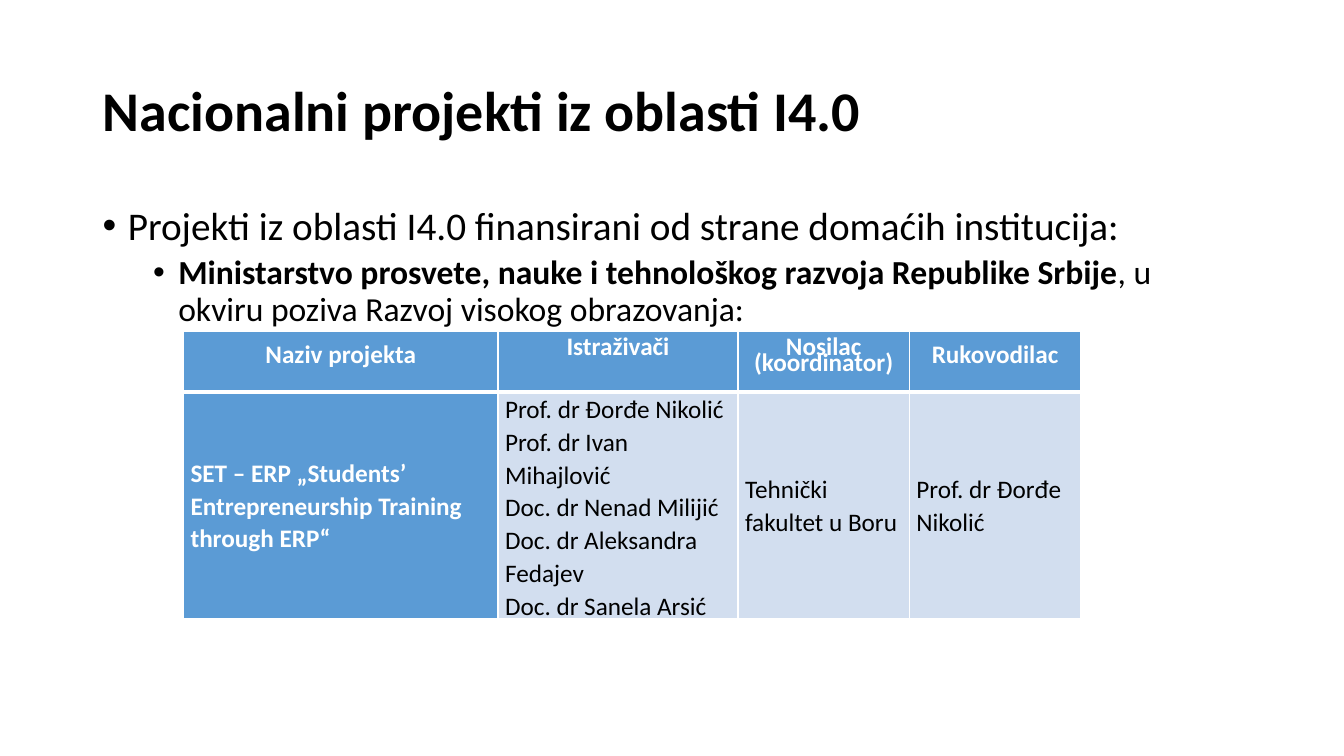
from lxml import etree
from pptx import Presentation
from pptx.dml.color import RGBColor
from pptx.enum.text import MSO_ANCHOR, PP_ALIGN
from pptx.oxml.ns import qn
from pptx.util import Inches, Pt

MIDDLE = MSO_ANCHOR.MIDDLE
LEFT, CENTER = PP_ALIGN.LEFT, PP_ALIGN.CENTER

FONT = "Calibri"
BLACK = RGBColor(0x00, 0x00, 0x00)
WHITE = RGBColor(0xFF, 0xFF, 0xFF)
BLUE = RGBColor(0x5B, 0x9B, 0xD5)
PALE_BLUE = RGBColor(0xD2, 0xDE, 0xEF)

TITLE = "Nacionalni projekti iz oblasti I4.0"
FUNDING = "Projekti iz oblasti I4.0 finansirani od strane domaćih institucija:"
MINISTRY = "Ministarstvo prosvete, nauke i tehnološkog razvoja Republike Srbije"
CALL = ", u okviru poziva Razvoj visokog obrazovanja:"

COLUMN_WIDTHS = [3.12, 2.38, 1.7, 1.7]
ROW_HEIGHTS = [0.6, 1.46]
HEADERS = [
    ["Naziv projekta"],
    ["Istraživači"],
    ["Nosilac", "(koordinator)"],
    ["Rukovodilac"],
]
PROJECT = [
    ["SET – ERP „Students’ Entrepreneurship Training through ERP“"],
    [
        "Prof. dr Đorđe Nikolić",
        "Prof. dr Ivan Mihajlović",
        "Doc. dr Nenad Milijić",
        "Doc. dr Aleksandra Fedajev",
        "Doc. dr Sanela Arsić",
    ],
    ["Tehnički fakultet u Boru"],
    ["Prof. dr Đorđe Nikolić"],
]


def format_paragraph(paragraph, size, color, spacing, bold=None, align=LEFT):
    paragraph.alignment = align
    paragraph.line_spacing = spacing
    font = paragraph.font
    font.name, font.size, font.bold = FONT, Pt(size), bold
    font.color.rgb = color


def add_bullet(paragraph, indent):
    properties = paragraph._p.get_or_add_pPr()
    properties.set("marL", str(Inches(indent)))
    properties.set("indent", str(Inches(-0.25)))
    bullet_font = etree.Element(qn("a:buFont"), typeface="Arial")
    bullet = etree.Element(qn("a:buChar"), char="•")
    # Bullets come before the default run properties
    default_run = properties.find(qn("a:defRPr"))
    default_run.addprevious(bullet_font)
    default_run.addprevious(bullet)


def add_title(slide):
    title = slide.shapes.title
    title.left, title.top = Inches(0.92), Inches(0.4)
    title.width, title.height = Inches(11.5), Inches(1.45)
    title.text_frame.text = TITLE
    title.text_frame.vertical_anchor = MIDDLE
    format_paragraph(title.text_frame.paragraphs[0], 40, BLACK, 0.9, bold=True)


def add_intro(slide):
    intro = slide.shapes.add_textbox(
        Inches(0.92), Inches(2), Inches(11.5), Inches(4.76)
    ).text_frame
    intro.word_wrap = True

    funding = intro.paragraphs[0]
    funding.text = FUNDING
    funding.space_before = Pt(10)
    format_paragraph(funding, 28, BLACK, 0.9)
    add_bullet(funding, 0.25)

    ministry = intro.add_paragraph()
    ministry.level = 1
    ministry.space_before = Pt(5)
    for text, bold in [(MINISTRY, True), (CALL, False)]:
        run = ministry.add_run()
        run.text = text
        run.font.bold = bold
    format_paragraph(ministry, 24, BLACK, 0.9)
    add_bullet(ministry, 0.75)


def set_borders(cell, top, bottom):
    properties = cell._tc.get_or_add_tcPr()
    for side, width in [("L", 1), ("R", 1), ("T", top), ("B", bottom)]:
        line = etree.SubElement(properties, qn(f"a:ln{side}"), w=str(Pt(width)))
        fill = etree.SubElement(line, qn("a:solidFill"))
        etree.SubElement(fill, qn("a:srgbClr"), val=str(WHITE))


def fill_cell(cell, lines, is_header, is_project_name):
    emphasized = is_header or is_project_name
    cell.margin_left = cell.margin_right = Inches(0.07)
    cell.margin_top = cell.margin_bottom = 0
    cell.vertical_anchor = MIDDLE
    set_borders(cell, *((1, 3) if is_header else (3, 1)))
    cell.fill.solid()
    cell.fill.fore_color.rgb = BLUE if emphasized else PALE_BLUE
    cell.text_frame.text = "\n".join(lines)
    for paragraph in cell.text_frame.paragraphs:
        format_paragraph(
            paragraph,
            18,
            WHITE if emphasized else BLACK,
            Pt(12) if is_header else 1.07,
            bold=emphasized,
            align=CENTER if is_header else LEFT,
        )


def add_project_table(slide):
    table = slide.shapes.add_table(
        len(ROW_HEIGHTS), len(COLUMN_WIDTHS), Inches(1.82), Inches(3.29),
        Inches(sum(COLUMN_WIDTHS)), Inches(sum(ROW_HEIGHTS)),
    ).table
    for column, width in zip(table.columns, COLUMN_WIDTHS):
        column.width = Inches(width)
    for row, height in zip(table.rows, ROW_HEIGHTS):
        row.height = Inches(height)
    for r, entries in enumerate([HEADERS, PROJECT]):
        for c, lines in enumerate(entries):
            fill_cell(table.cell(r, c), lines, r == 0, c == 0)
    # The researchers heading sits one line higher
    table.cell(0, 1).margin_bottom = Pt(12)


def main():
    presentation = Presentation()
    presentation.slide_width = Inches(13.33)
    presentation.slide_height = Inches(7.5)
    title_only = presentation.slide_layouts[5]
    slide = presentation.slides.add_slide(title_only)

    add_title(slide)
    add_intro(slide)
    add_project_table(slide)

    presentation.save("out.pptx")


if __name__ == "__main__":
    main()
